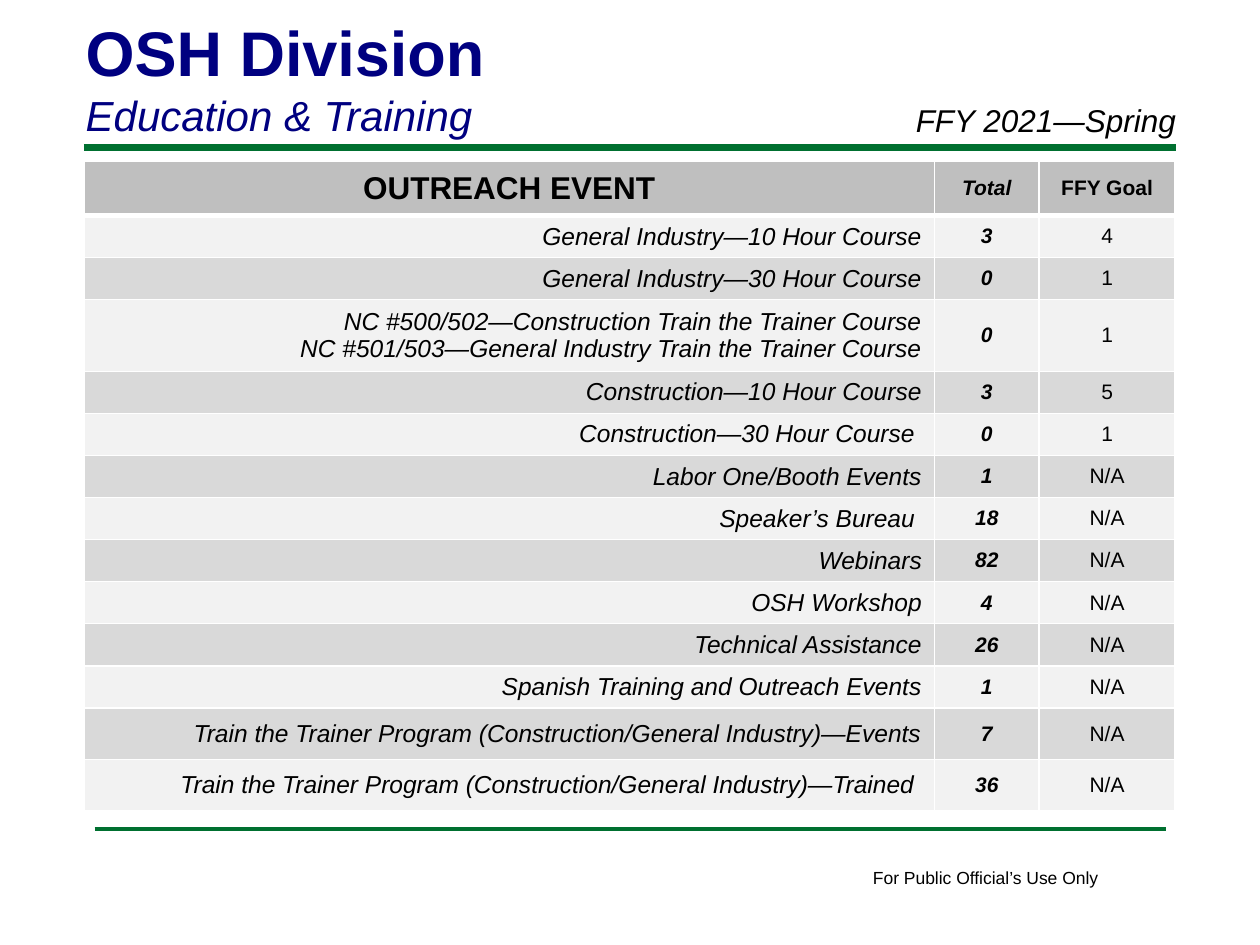
from lxml.etree import SubElement
from pptx import Presentation
from pptx.dml.color import RGBColor
from pptx.enum.shapes import MSO_CONNECTOR
from pptx.enum.text import MSO_ANCHOR, MSO_AUTO_SIZE, PP_ALIGN
from pptx.oxml import parse_xml
from pptx.oxml.ns import nsdecls, qn
from pptx.util import Inches, Pt

BLACK = RGBColor(0x00, 0x00, 0x00)
WHITE = RGBColor(0xFF, 0xFF, 0xFF)
NAVY = RGBColor(0x00, 0x00, 0x80)
GREEN = RGBColor(0x00, 0x70, 0x30)
HEADER_GRAY = RGBColor(0xBF, 0xBF, 0xBF)
BAND_GRAYS = (RGBColor(0xF2, 0xF2, 0xF2), RGBColor(0xD9, 0xD9, 0xD9))

TITLE = [
    ("OSH Division", {"size": Pt(36), "bold": True, "italic": False}),
    ("Education & Training", {"size": Pt(24), "bold": False, "italic": True}),
]
PERIOD = "FFY 2021—Spring"
FOOTER = "For Public Official’s Use Only"

HEADERS = ("OUTREACH EVENT", "Total", "FFY Goal")
EVENTS = [
    ("General Industry—10 Hour Course", "3", "4"),
    ("General Industry—30 Hour Course", "0", "1"),
    ("NC #500/502—Construction Train the Trainer Course\n"
     "NC #501/503—General Industry Train the Trainer Course", "0", "1"),
    ("Construction—10 Hour Course", "3", "5"),
    ("Construction—30 Hour Course ", "0", "1"),
    ("Labor One/Booth Events", "1", "N/A"),
    ("Speaker’s Bureau ", "18", "N/A"),
    ("Webinars", "82", "N/A"),
    ("OSH Workshop", "4", "N/A"),
    ("Technical Assistance", "26", "N/A"),
    ("Spanish Training and Outreach Events", "1", "N/A"),
    ("Train the Trainer Program (Construction/General Industry)—Events", "7", "N/A"),
    ("Train the Trainer Program (Construction/General Industry)—Trained ", "36", "N/A"),
]
HEADER_FORMATS = [
    {"size": Pt(18), "bold": True, "italic": False},
    {"size": Pt(12), "bold": True, "italic": True},
    {"size": Pt(12), "bold": True, "italic": False},
]
EVENT_FORMATS = [
    {"size": Pt(14), "bold": False, "italic": True},
    {"size": Pt(12), "bold": True, "italic": True},
    {"size": Pt(12), "bold": False, "italic": False},
]
EVENT_ALIGNMENTS = (PP_ALIGN.RIGHT, PP_ALIGN.CENTER, PP_ALIGN.CENTER)

SLIDE_WIDTH, SLIDE_HEIGHT = 10, 7.5
MARGIN = SLIDE_WIDTH / 15
TABLE_TOP = 1.28
COLUMN_WIDTHS = (6.75, 0.83, 1.08)
ROW_HEIGHT = 1 / 3
ROW_HEIGHTS = {0: 0.43, 3: 0.57, 12: 0.41, 13: 0.41}
RULES = [(MARGIN, 1.17, 4), (0.75, 6.58, 2)]


def format_paragraph(paragraph, text, color, alignment, values):
    paragraph.alignment = alignment
    run = paragraph.add_run()
    run.text = text
    run.font.name = "Arial"
    run.font.color.rgb = color
    for name, value in values.items():
        setattr(run.font, name, value)


def fill_frame(frame, lines, color, alignment=PP_ALIGN.LEFT):
    for index, (text, values) in enumerate(lines):
        paragraph = frame.add_paragraph() if index else frame.paragraphs[0]
        format_paragraph(paragraph, text, color, alignment, values)


def add_text(slide, box, text, values, wrap):
    frame = slide.shapes.add_textbox(*map(Inches, box)).text_frame
    frame.word_wrap = wrap
    fill_frame(frame, [(text, values)], BLACK)


def add_rule(slide, left, top, weight):
    rule = slide.shapes.add_connector(
        MSO_CONNECTOR.STRAIGHT, Inches(left), Inches(top),
        Inches(SLIDE_WIDTH - left), Inches(top))
    rule.line.color.rgb = GREEN
    rule.line.width = Pt(weight)
    SubElement(rule._element.spPr, qn("a:effectLst"))


def set_borders(cell, top, bottom):
    properties = cell._tc.get_or_add_tcPr()
    for side, weight in (("L", 1), ("R", 1), ("T", top), ("B", bottom)):
        properties.append(parse_xml(
            f'<a:ln{side} {nsdecls("a")} w="{Pt(weight)}"><a:solidFill>'
            f'<a:srgbClr val="{WHITE}"/></a:solidFill></a:ln{side}>'))


def add_event_table(slide):
    rows = [HEADERS] + EVENTS
    heights = [ROW_HEIGHTS.get(index, ROW_HEIGHT) for index in range(len(rows))]
    table = slide.shapes.add_table(
        len(rows), len(HEADERS), Inches(MARGIN), Inches(TABLE_TOP),
        Inches(sum(COLUMN_WIDTHS)), Inches(sum(heights))).table
    for column, width in zip(table.columns, COLUMN_WIDTHS):
        column.width = Inches(width)
    for row_index, (row, height) in enumerate(zip(rows, heights)):
        table.rows[row_index].height = Inches(height)
        is_header = row_index == 0
        formats = HEADER_FORMATS if is_header else EVENT_FORMATS
        fill = HEADER_GRAY if is_header else BAND_GRAYS[(row_index - 1) % 2]
        for column_index, text in enumerate(row):
            cell = table.cell(row_index, column_index)
            set_borders(cell, 3 if row_index == 1 else 1, 3 if is_header else 1)
            cell.fill.solid()
            cell.fill.fore_color.rgb = fill
            cell.vertical_anchor = MSO_ANCHOR.MIDDLE
            alignment = PP_ALIGN.CENTER if is_header else EVENT_ALIGNMENTS[column_index]
            lines = [(line, formats[column_index]) for line in text.split("\n")]
            fill_frame(cell.text_frame, lines, BLACK, alignment)


def add_title(slide):
    title = slide.shapes.title
    title.left, title.top, title.width, title.height = map(
        Inches, (0.58, 0.06, 8.25, 1.11))
    frame = title.text_frame
    frame.auto_size = MSO_AUTO_SIZE.NONE
    frame.word_wrap = True
    frame.vertical_anchor = MSO_ANCHOR.TOP
    fill_frame(frame, TITLE, NAVY)
    for paragraph in frame.paragraphs:
        paragraph.space_before = Pt(0)


def main():
    presentation = Presentation()
    presentation.slide_width = Inches(SLIDE_WIDTH)
    presentation.slide_height = Inches(SLIDE_HEIGHT)
    slide = presentation.slides.add_slide(presentation.slide_layouts[5])
    for rule in RULES:
        add_rule(slide, *rule)
    add_text(slide, (6.83, 6.83, 2.01, 0.27), FOOTER, {"size": Pt(10)}, False)
    add_event_table(slide)
    add_text(slide, (7.17, 0.75, 2.5, 0.4), PERIOD,
             {"size": Pt(18), "italic": True}, True)
    add_title(slide)
    presentation.save("out.pptx")


if __name__ == "__main__":
    main()
